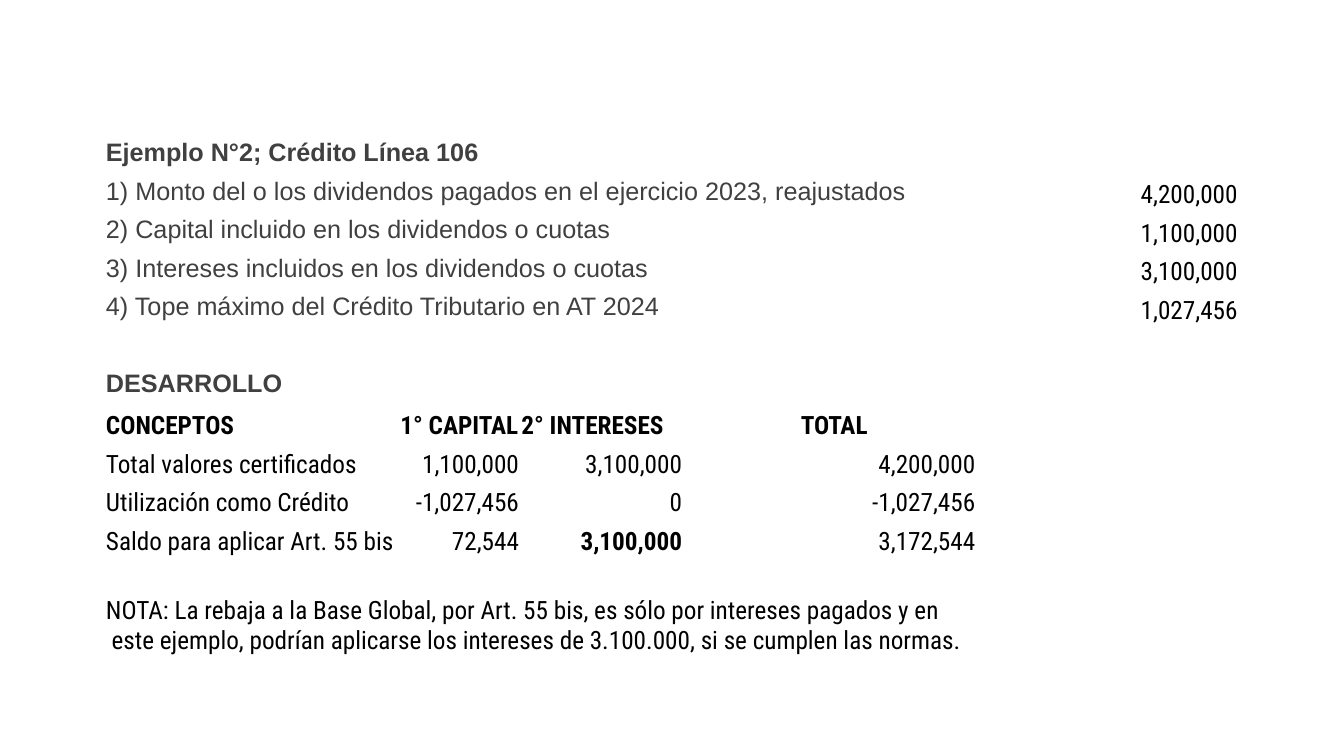
from pptx import Presentation
from pptx.dml.color import RGBColor
from pptx.enum import text
from pptx.util import Cm, Pt

COLORS = {"heading": "404040", "body": "000000"}
MIDDLE, BOTTOM = text.MSO_ANCHOR.MIDDLE, text.MSO_ANCHOR.BOTTOM
LEFT, RIGHT = text.PP_ALIGN.LEFT, text.PP_ALIGN.RIGHT

presentation = Presentation()
presentation.slide_width = Cm(33.87)
presentation.slide_height = Cm(19.05)
slide = presentation.slides.add_slide(presentation.slide_layouts[6])

# Table grid
column_widths = [7.42, 3.05, 4.11, 7.39, 3.56, 3.05]
row_count, row_height, note_row, note_height = 14, 0.97, 12, 1.5
table = slide.shapes.add_table(
    row_count, len(column_widths), Cm(2.64), Cm(3.35),
    Cm(sum(column_widths)), Cm(13 * row_height + note_height)).table
table.first_row = False
table.horz_banding = False
for column, width in zip(table.columns, column_widths):
    column.width = Cm(width)
for index, row in enumerate(table.rows):
    row.height = Cm(note_height if index == note_row else row_height)
    for cell in row.cells:
        cell.fill.background()
        cell_format = {"margin_left": Cm(0.03), "margin_right": Cm(0.03),
                       "margin_top": Cm(0.03), "margin_bottom": Cm(0)}
        for name, value in cell_format.items():
            setattr(cell, name, value)

# Merged cells: row -> number of columns from the left
for row, span in {0: 2, 1: 4, 2: 3, 3: 3, 4: 3, 12: 4, 13: 4}.items():
    table.cell(row, 0).merge(table.cell(row, span - 1))


def write(row, column, content, style="body", bold=False, align=LEFT):
    cell = table.cell(row, column)
    cell.text = content
    cell.vertical_anchor = MIDDLE if style == "heading" else BOTTOM
    font_format = {"name": "Arial" if style == "heading" else "Roboto Condensed",
                   "size": Pt(18), "bold": bold}
    for paragraph in cell.text_frame.paragraphs:
        paragraph.alignment = align
        for run in paragraph.runs:
            run.font.color.rgb = RGBColor.from_string(COLORS[style])
            for name, value in font_format.items():
                setattr(run.font, name, value)


# Example data
write(0, 0, "Ejemplo N°2; Crédito Línea 106", "heading", True)
example_lines = [
    ("1) Monto del o los dividendos pagados en el ejercicio 2023, reajustados", "4,200,000"),
    ("2) Capital incluido en los dividendos o cuotas", "1,100,000"),
    ("3) Intereses incluidos en los dividendos o cuotas", "3,100,000"),
    ("4) Tope máximo del Crédito Tributario en AT 2024", "1,027,456"),
]
for row, (label, amount) in enumerate(example_lines, start=1):
    write(row, 0, label, "heading")
    write(row, 5, amount, align=RIGHT)

# Worked solution
write(6, 0, "DESARROLLO", "heading", True)
for column, title in enumerate(["CONCEPTOS", "1° CAPITAL", "2° INTERESES", "TOTAL"]):
    write(7, column, title, bold=True)
table.cell(7, 3).margin_left = Cm(2.96)

solution_rows = [
    ("Total valores certificados", "1,100,000", "3,100,000", "4,200,000"),
    ("Utilización como Crédito", "-1,027,456", "0", "-1,027,456"),
    ("Saldo para aplicar Art. 55 bis", "72,544", "3,100,000", "3,172,544"),
]
for row, (concept, *amounts) in enumerate(solution_rows, start=8):
    write(row, 0, concept)
    for column, amount in enumerate(amounts, start=1):
        deductible_interest = (row, column) == (10, 2)
        write(row, column, amount, bold=deductible_interest, align=RIGHT)

# Closing note
write(note_row, 0,
      "NOTA: La rebaja a la Base Global, por Art. 55 bis, es sólo por intereses pagados y en\n"
      " este ejemplo, podrían aplicarse los intereses de 3.100.000, si se cumplen las normas.")

presentation.save("out.pptx")
